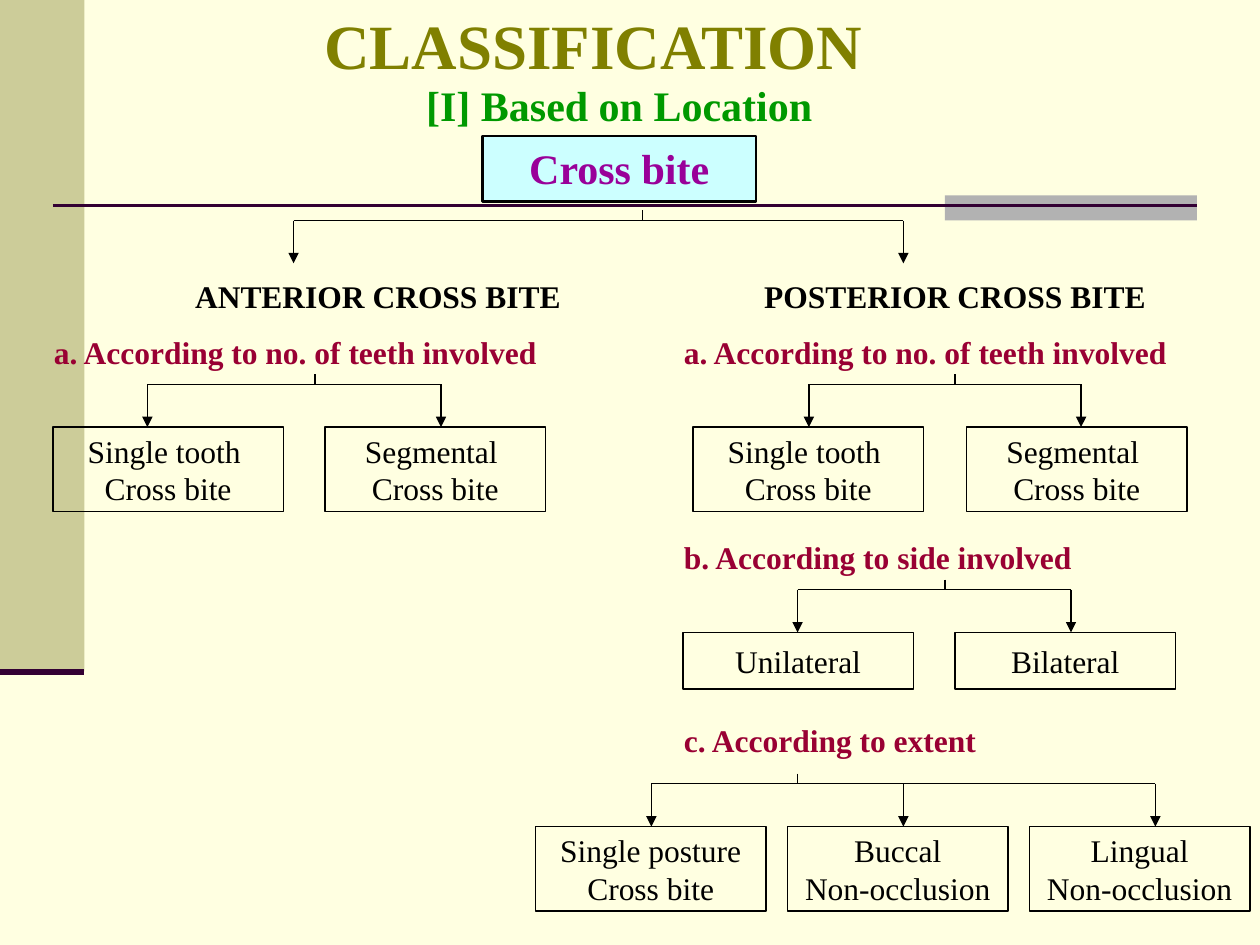
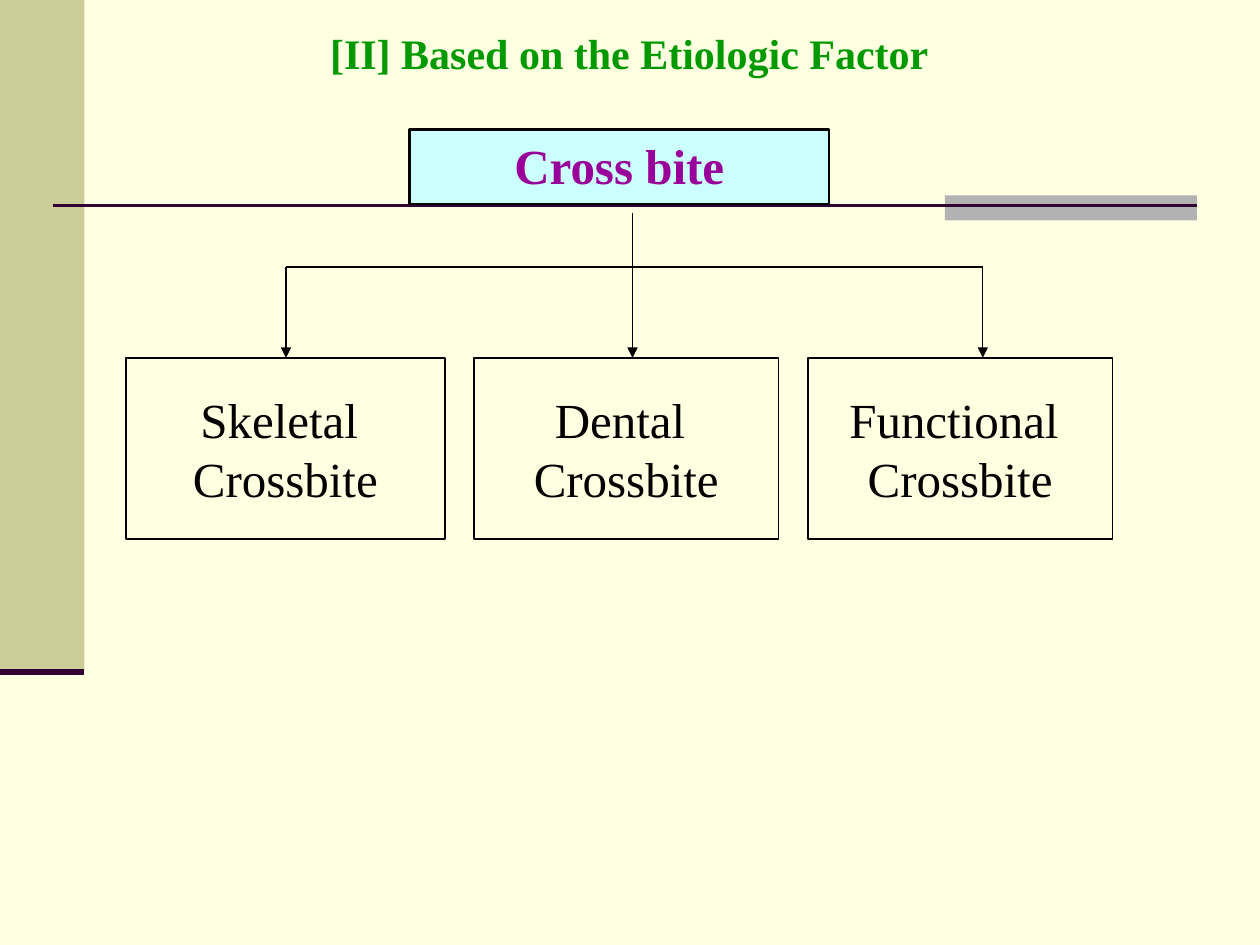
import dataclasses

import pptx
import pptx.dml.color
import pptx.enum.shapes
import pptx.enum.text
import pptx.oxml
import pptx.oxml.ns
import pptx.util

Inches = pptx.util.Inches
ALIGN = pptx.enum.text.PP_ALIGN
ANCHOR = pptx.enum.text.MSO_ANCHOR


def rgb(value):
    return pptx.dml.color.RGBColor.from_string(value)


def apply_format(target, values):
    for name, value in values.items():
        setattr(target, name, value)


@dataclasses.dataclass(frozen=True)
class Theme:
    font: str = "Times New Roman"
    page: str = "FFFFE1"
    band: str = "CCCC99"
    tab: str = "B2B2B2"
    rule: str = "330033"
    ink: str = "000000"
    title: str = "808000"
    subtitle: str = "009900"
    criterion: str = "990033"
    root_fill: str = "CCFFFF"
    root_text: str = "990099"
    title_size: int = 36
    large_size: int = 28
    subtitle_size: int = 24
    body_size: int = 18
    thin: float = 0.75
    outline: float = 1
    heavy: float = 1.5
    band_edge: float = 3.5


class Sketch:
    """Holds the theme and the slide being drawn."""

    def __init__(self, deck, theme):
        self.deck, self.theme = deck, theme
        self.page = None
        background = deck.slide_master.background.fill
        background.solid()
        background.fore_color.rgb = rgb(theme.page)

    def new_page(self):
        theme = self.theme
        self.page = self.deck.slides.add_slide(self.deck.slide_layouts[6])
        self.rectangle(0, 0, 0.67, 5.33, fill=theme.band)
        self.rectangle(7.5, 1.55, 2, 0.2, fill=theme.tab)
        self.line((0.42, 1.63), (9.5, 1.63), theme.rule, theme.heavy)
        self.line((0, 5.33), (0.67, 5.33), theme.rule, theme.band_edge)

    def rectangle(self, left, top, width, height, fill=None, outline=None):
        shape = self.page.shapes.add_shape(
            pptx.enum.shapes.MSO_SHAPE.RECTANGLE,
            Inches(left), Inches(top), Inches(width), Inches(height))
        shape.shadow.inherit = False
        if fill:
            shape.fill.solid()
            shape.fill.fore_color.rgb = rgb(fill)
        else:
            shape.fill.background()
        if outline:
            shape.line.color.rgb = rgb(self.theme.ink)
            shape.line.width = pptx.util.Pt(outline)
        else:
            shape.line.fill.background()
        return shape

    def line(self, start, end, color=None, width=None, arrow=False):
        connector = self.page.shapes.add_connector(
            pptx.enum.shapes.MSO_CONNECTOR.STRAIGHT,
            *(Inches(value) for value in (*start, *end)))
        connector.line.color.rgb = rgb(color or self.theme.ink)
        connector.line.width = pptx.util.Pt(width or self.theme.thin)
        namespace = pptx.oxml.ns.nsdecls("a")
        if arrow:
            connector.line._get_or_add_ln().append(
                pptx.oxml.parse_xml(f'<a:tailEnd {namespace} type="triangle"/>'))
        connector._element.spPr.append(
            pptx.oxml.parse_xml(f"<a:effectLst {namespace}/>"))

    def set_text(self, shape, lines, size, color, bold=False, align=ALIGN.CENTER,
                 anchor=ANCHOR.TOP, wrap=True):
        frame = shape.text_frame
        apply_format(frame, {"word_wrap": wrap, "vertical_anchor": anchor})
        frame.text = "\n".join(lines)
        for para in frame.paragraphs:
            para.alignment = align
            apply_format(para.font, {"name": self.theme.font, "bold": bold,
                                     "size": pptx.util.Pt(size)})
            para.font.color.rgb = rgb(color)

    def label(self, text, left, top, width, height, size, color, align=ALIGN.CENTER):
        box = self.page.shapes.add_textbox(
            Inches(left), Inches(top), Inches(width), Inches(height))
        self.set_text(box, [text], size, color, bold=True, align=align)

    def subtitle(self, text, left, top):
        self.label(text, left, top, 9.33, 0.5,
                   self.theme.subtitle_size, self.theme.subtitle)

    def heading(self, text, left):
        self.label(text, left, 2.15, 3.5, 0.4, self.theme.body_size, self.theme.ink)

    def criterion(self, text, left, top):
        self.label(text, left, top, 4.25, 0.4, self.theme.body_size,
                   self.theme.criterion, ALIGN.LEFT)

    def root(self, left, top, width, height, size):
        shape = self.rectangle(left, top, width, height,
                               self.theme.root_fill, self.theme.heavy)
        self.set_text(shape, ["Cross bite"], size, self.theme.root_text, bold=True)

    def leaves(self, nodes, top, height, size):
        """Draw boxes in a row from (left, width, lines) entries."""
        for left, width, lines in nodes:
            shape = self.rectangle(left, top, width, height,
                                   outline=self.theme.outline)
            self.set_text(shape, lines, size, self.theme.ink,
                          anchor=ANCHOR.MIDDLE, wrap=False)

    def fork(self, stem, tips, bar, stem_height=0.08, drop=0.34):
        """Join a stem to a horizontal bar with an arrow down at each tip."""
        self.line((stem, bar - stem_height), (stem, bar))
        self.line((tips[0], bar), (tips[-1], bar))
        for tip in tips:
            self.line((tip, bar), (tip, bar + drop), arrow=True)


def draw_location(sketch):
    theme = sketch.theme
    sketch.new_page()
    sketch.label("CLASSIFICATION", 0, 0, 9.42, 0.7, theme.title_size, theme.title)
    sketch.subtitle("[I] Based on Location", 0.25, 0.58)
    sketch.root(3.83, 1.08, 2.17, 0.52, theme.subtitle_size)
    sketch.fork(5.1, [2.33, 7.17], 1.75)
    sketch.heading("ANTERIOR CROSS BITE", 1.25)
    sketch.heading("POSTERIOR CROSS BITE", 5.83)

    single = ["Single tooth ", "Cross bite"]
    segmental = ["Segmental ", "Cross bite"]
    extent = [(4.25, 1.83, ["Single posture", "Cross bite"]),
              (6.25, 1.75, ["Buccal", "Non-occlusion"]),
              (8.17, 1.75, ["Lingual", "Non-occlusion"])]
    teeth = "a. According to no. of teeth involved"
    # Criterion, its left and top, stem, tips, bar, leaves, leaf height
    groups = [
        (teeth, 0.33, 2.59, 2.5, [1.17, 3.5], 3.05,
         [(0.42, 1.83, single), (2.58, 1.75, segmental)], 0.67),
        (teeth, 5.33, 2.59, 7.58, [6.42, 8.58], 3.05,
         [(5.5, 1.83, single), (7.67, 1.75, segmental)], 0.67),
        ("b. According to side involved", 5.33, 4.22, 7.5, [6.33, 8.5], 4.68,
         [(5.42, 1.83, ["Unilateral"]), (7.58, 1.75, ["Bilateral"])], 0.45),
        ("c. According to extent", 5.33, 5.67, 6.33, [5.17, 7.17, 9.17], 6.22,
         extent, 0.67),
    ]
    for text, left, top, stem, tips, bar, nodes, height in groups:
        sketch.criterion(text, left, top)
        sketch.fork(stem, tips, bar)
        sketch.leaves(nodes, bar + 0.34, height, theme.body_size)


def draw_etiology(sketch):
    size = sketch.theme.large_size
    sketch.new_page()
    sketch.subtitle("[II] Based on the Etiologic Factor", 0.33, 0.17)
    sketch.root(3.25, 1.03, 3.33, 0.59, size)
    sketch.fork(5.02, [2.27, 5.02, 7.8], 2.12, stem_height=0.43, drop=0.72)
    columns = [(1, 2.53, "Skeletal "), (3.76, 2.42, "Dental "),
               (6.41, 2.42, "Functional ")]
    sketch.leaves([(left, width, [kind, "Crossbite"])
                   for left, width, kind in columns], 2.84, 1.44, size)


def main():
    deck = pptx.Presentation()
    apply_format(deck, {"slide_width": Inches(10), "slide_height": Inches(7.5)})
    sketch = Sketch(deck, Theme())
    draw_location(sketch)
    draw_etiology(sketch)
    deck.save("out.pptx")


if __name__ == "__main__":
    main()
